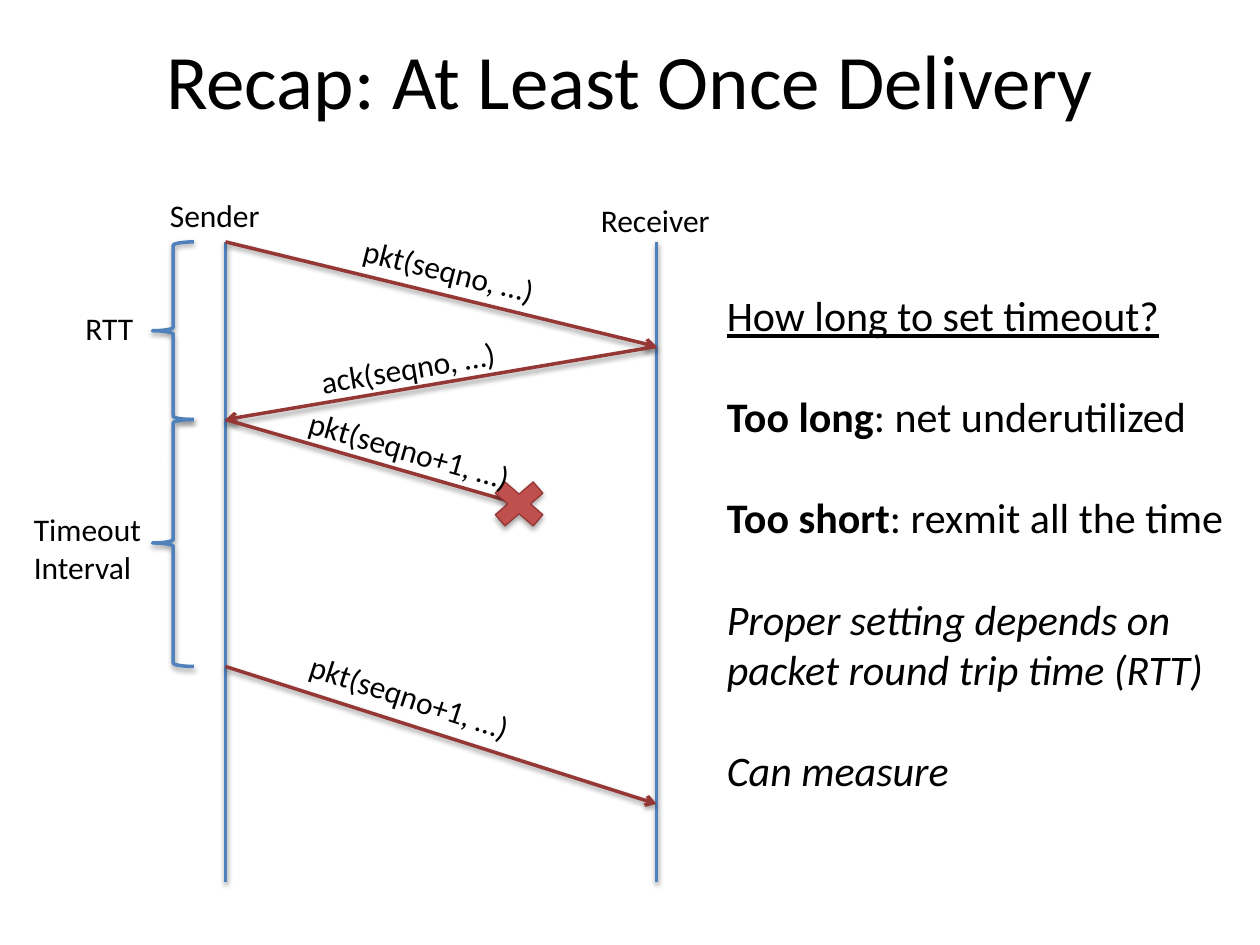
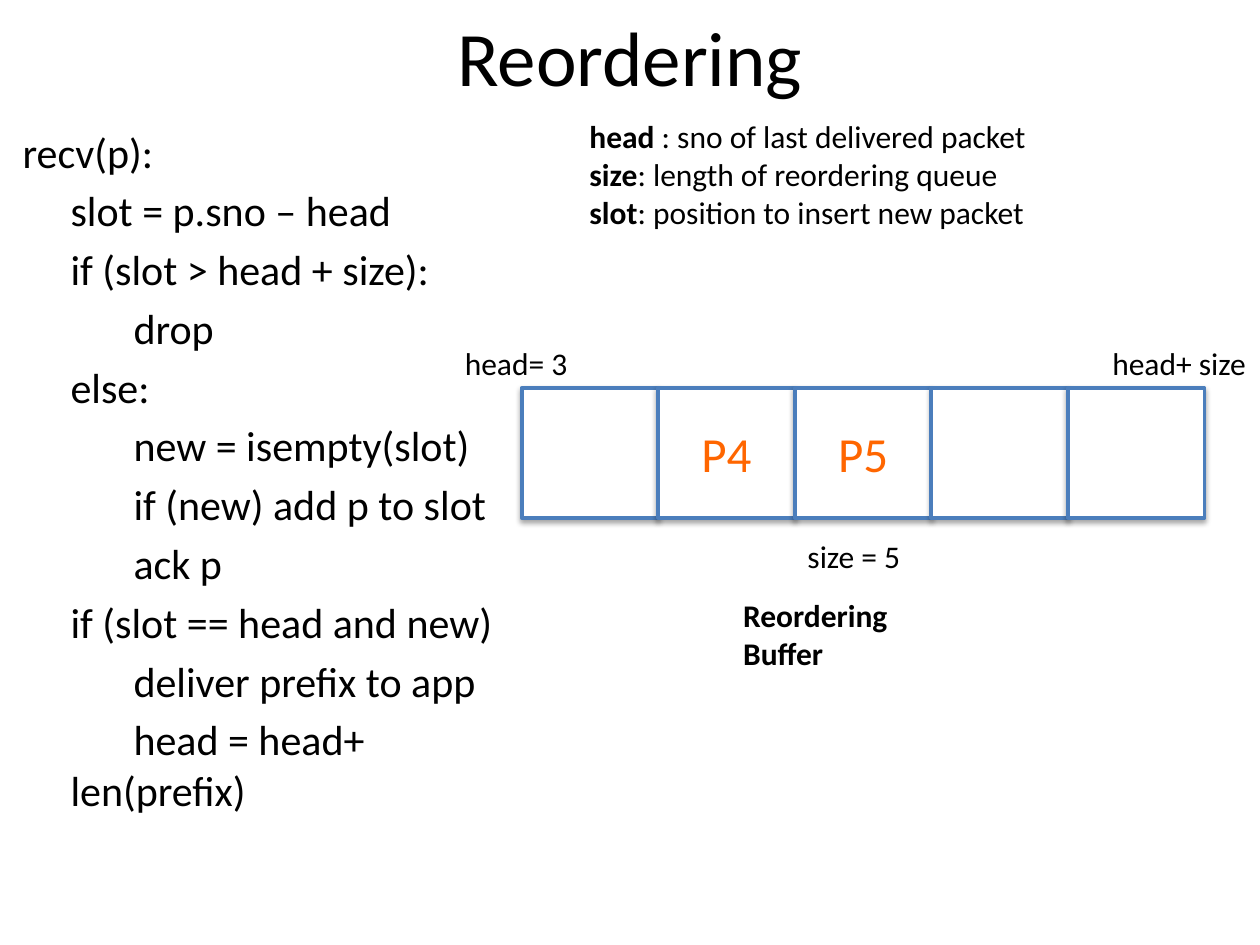
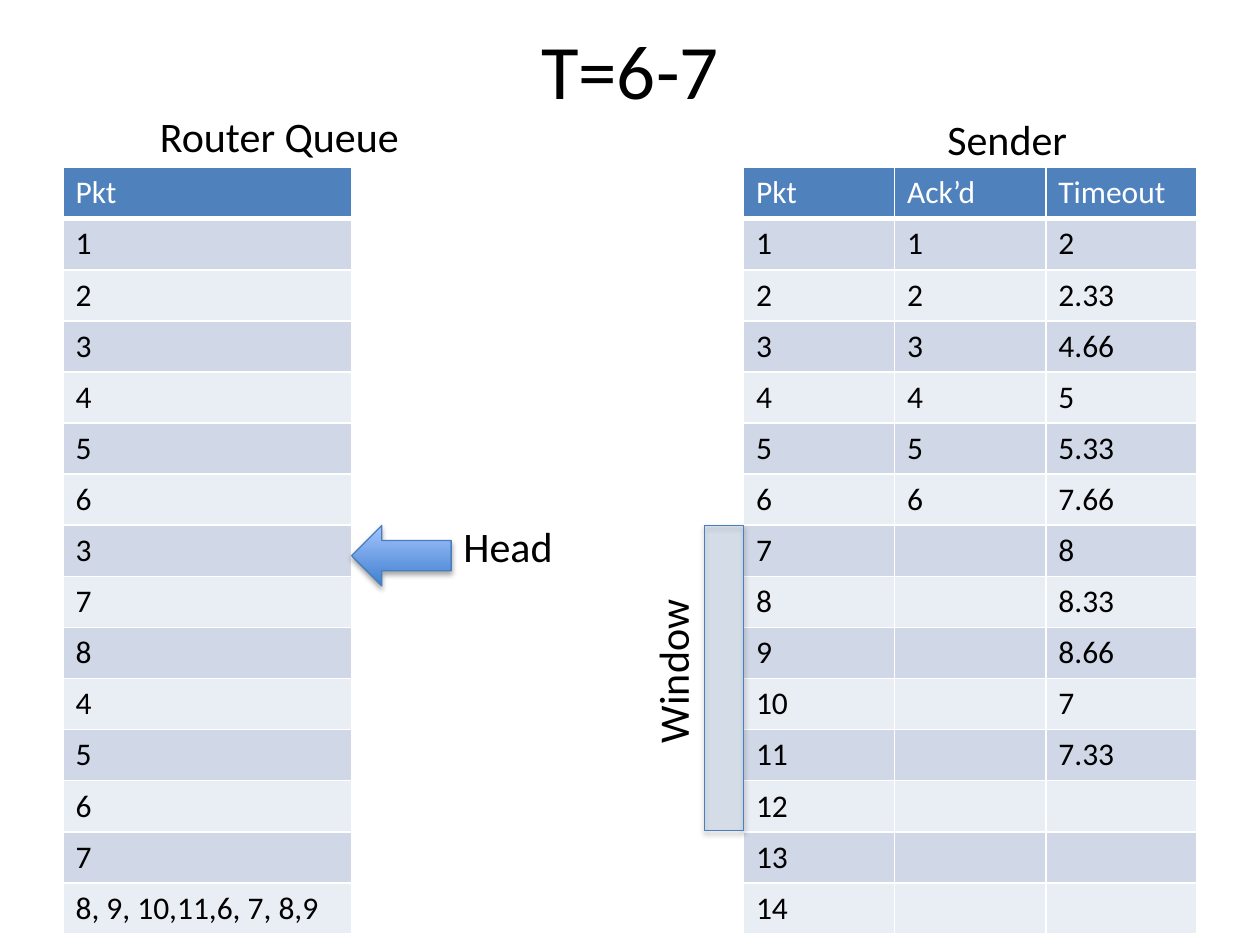
from dataclasses import dataclass
from typing import Any, NamedTuple

from lxml import etree
from pptx import Presentation
from pptx.dml.color import RGBColor
from pptx.enum.shapes import MSO_CONNECTOR, MSO_SHAPE
from pptx.enum.text import MSO_ANCHOR, MSO_AUTO_SIZE, PP_ALIGN
from pptx.oxml.ns import qn
from pptx.util import Inches, Pt

STRAIGHT = MSO_CONNECTOR.STRAIGHT
RECT = MSO_SHAPE.RECTANGLE
BRACE = MSO_SHAPE.LEFT_BRACE
CROSS = MSO_SHAPE.MATH_MULTIPLY
LEFT_ARROW = MSO_SHAPE.LEFT_ARROW
MIDDLE = MSO_ANCHOR.MIDDLE
CENTER = PP_ALIGN.CENTER
GROW = MSO_AUTO_SIZE.SHAPE_TO_FIT_TEXT
FIXED = MSO_AUTO_SIZE.NONE

FONT = "Calibri"
BLACK, WHITE = "000000", "FFFFFF"
BLUE, EDGE, RED, DARK_RED, ORANGE = "4F81BD", "4B7EBC", "C0504D", "953735", "FF6600"
ARROW_LIGHT, ARROW_DARK = "A4C4FF", "3F80CE"
BANDS = ("D0D8E8", "E9EDF4")
TITLE_ONLY, TITLE_AND_CONTENT = 5, 1

BOLD = {"bold": True}
ITALIC = {"italic": True}
UNDERLINE = {"underline": True}

Box = tuple[float, float, float, float]
Point = tuple[float, float]


class Run(NamedTuple):
    text: str
    fmt: dict[str, Any] = {}


Paras = list[list[Run]]


@dataclass
class Label:
    paras: Paras
    at: Box
    size: int = 18
    rotation: float = 0
    wrap: bool = True
    gap: int = 0


@dataclass
class Message:
    text: str
    start: Point
    end: Point
    label_at: Box
    rotation: float
    lost: bool = False


@dataclass
class Grid:
    rows: list[tuple[str, ...]]
    at: Box


SENDER_X, RECEIVER_X = 1.79, 5.21
LIFE_TOP, LIFE_END = 1.92, 7
ACK_Y, RESEND_Y = 3.33, 5.29

MESSAGES = [
    Message("pkt(seqno, …)", (SENDER_X, LIFE_TOP), (RECEIVER_X, 2.75), (2.77, 1.97, 1.79, 0.4), 14.1),
    Message("ack(seqno, …)", (RECEIVER_X, 2.75), (SENDER_X, ACK_Y), (2.44, 2.7, 1.79, 0.4), 350.4),
    Message("pkt(seqno+1, …)", (SENDER_X, ACK_Y), (4.12, 4), (2.33, 3.39, 1.98, 0.4), 16, True),
    Message("pkt(seqno+1, …)", (SENDER_X, RESEND_Y), (RECEIVER_X, 6.38), (2.33, 5.35, 1.98, 0.4), 18),
]

DELIVERY_LABELS = [
    Label([[Run("Timeout Interval")]], (0.17, 4, 1.58, 0.71)),
    Label([[Run("RTT")]], (0.58, 2.4, 1.58, 0.4)),
    Label([[Run("Sender")]], (1.25, 1.51, 1.83, 0.4)),
    Label([[Run("Receiver")]], (4.67, 1.55, 1.83, 0.4)),
    Label(
        [
            [Run("How long to set timeout?", UNDERLINE)],
            [Run("Too long", BOLD), Run(": net underutilized")],
            [Run("Too short", BOLD), Run(": rexmit all the time")],
            [Run("Proper setting depends on packet round trip time (RTT)", ITALIC)],
            [Run("Can measure", ITALIC)],
        ],
        (5.67, 2.25, 4.33, 4.14), 24, gap=29,
    ),
]

RECV_CODE = [
    (0, "recv(p):"),
    (1, "slot = p.sno – head"),
    (1, "if (slot > head + size):"),
    (2, "drop"),
    (1, "else:"),
    (2, "new = isempty(slot)"),
    (2, "if (new) add p to slot"),
    (2, "ack p"),
    (1, "if (slot == head and new)"),
    (2, "deliver prefix to app"),
    (2, "head = head+ len(prefix)"),
]
CODE_MARGIN = Inches(0.38)
FIRST_LINE_INDENTS = (-CODE_MARGIN, 0, Inches(0.5))

BUFFER = ("", "P4", "P5", "", "")
BUFFER_LEFT, BUFFER_TOP, BUFFER_W, BUFFER_H = 4.14, 3.08, 5.42, 1.03

REORDERING_LABELS = [
    Label([[Run("size = 5")]], (6.31, 4.21, 0.95, 0.4), wrap=False),
    Label([[Run("head= 3")]], (3.59, 2.68, 1.02, 0.4), wrap=False),
    Label([[Run("head+ size")]], (8.73, 2.68, 1.27, 0.4), wrap=False),
    Label(
        [
            [Run("head ", BOLD), Run(": sno of last delivered packet")],
            [Run("size", BOLD), Run(": length of reordering queue")],
            [Run("slot", BOLD), Run(": position to insert new packet")],
        ],
        (4.58, 0.88, 5, 1.31),
    ),
    Label([[Run("Reordering", BOLD)], [Run("Buffer", BOLD)]], (5.8, 4.68, 1.37, 0.71), wrap=False),
]

QUEUE = ("Pkt", "1", "2", "3", "4", "5", "6", "3", "7", "8", "4", "5", "6", "7", "8, 9, 10,11,6, 7, 8,9")
TIMEOUTS = ("2", "2.33", "4.66", "5", "5.33", "7.66", "8", "8.33", "8.66", "7", "7.33", "", "", "")
LAST_ACKED = 6

GRIDS = [
    Grid([(pkt,) for pkt in QUEUE], (0.5, 1.33, 2.29, 6.08)),
    Grid(
        [("Pkt", "Ack’d", "Timeout")]
        + [(str(n), str(n) if n <= LAST_ACKED else "", t) for n, t in enumerate(TIMEOUTS, 1)],
        (5.9, 1.33, 3.6, 6.08),
    ),
]

QUEUE_LABELS = [
    Label([[Run("Router Queue")]], (1.17, 0.83, 2.12, 0.5), 24, wrap=False),
    Label([[Run("Sender")]], (7.42, 0.85, 1.16, 0.5), 24, wrap=False),
    Label([[Run("Window")]], (4.66, 5.07, 1.35, 0.5), 24, 270, False),
    Label([[Run("Head")]], (3.58, 4.08, 0.92, 0.5), 24, wrap=False),
]


def rgb(color: str) -> RGBColor:
    return RGBColor.from_string(color)


def inches(at: Box) -> list[int]:
    return [Inches(v) for v in at]


def add_xml(parent: Any, tag: str, **attrs: Any) -> Any:
    return etree.SubElement(parent, qn(tag), {k: str(v) for k, v in attrs.items()})


def add_run(p: Any, run: Run, size: int, color: str = BLACK) -> None:
    r = p.add_run()
    r.text = run.text
    r.font.color.rgb = rgb(color)
    for name, value in {"name": FONT, "size": Pt(size), **run.fmt}.items():
        setattr(r.font, name, value)


def write(tf: Any, paras: Paras, size: int, color: str = BLACK, gap: int = 0) -> None:
    for i, runs in enumerate(paras):
        p = tf.add_paragraph() if i else tf.paragraphs[0]
        if i and gap:
            p.space_before = Pt(gap)
        for run in runs:
            add_run(p, run, size, color)


def place(sp: Any, at: Box) -> None:
    for name, value in zip(("left", "top", "width", "height"), inches(at)):
        setattr(sp, name, value)


def add_slide(prs: Any, layout: int, title: str, at: Box) -> Any:
    s = prs.slides.add_slide(prs.slide_layouts[layout])
    place(s.shapes.title, at)
    write(s.shapes.title.text_frame, [[Run(title)]], 44)
    return s


def add_labels(s: Any, labels: list[Label]) -> None:
    for label in labels:
        sp = s.shapes.add_textbox(*inches(label.at))
        sp.rotation = label.rotation
        tf = sp.text_frame
        tf.word_wrap = label.wrap
        tf.auto_size = GROW
        write(tf, label.paras, label.size, gap=label.gap)


def style(sp: Any, line: str, width: float, distance: float, opacity: int) -> None:
    sp.line.color.rgb = rgb(line)
    sp.line.width = Pt(width)
    effects = add_xml(sp._element.spPr, "a:effectLst")
    shadow = add_xml(effects, "a:outerShdw", blurRad=Pt(3.1), dist=Pt(distance),
                     dir=90 * 60000, rotWithShape=0)
    add_xml(add_xml(shadow, "a:srgbClr", val=BLACK), "a:alpha", val=opacity * 1000)


def add_figure(s: Any, kind: Any, at: Box, fill: str = "", line: str = EDGE, width: float = 0.75) -> Any:
    sp = s.shapes.add_shape(kind, *inches(at))
    if fill:
        sp.fill.solid()
        sp.fill.fore_color.rgb = rgb(fill)
    else:
        sp.fill.background()
    style(sp, line, width, *((1.8, 35) if fill else (1.6, 38)))
    return sp


def add_line(s: Any, start: Point, end: Point, color: str, arrow: bool = False) -> None:
    cx = s.shapes.add_connector(STRAIGHT, *[Inches(v) for v in start + end])
    style(cx, color, 2, 1.6, 38)
    if arrow:
        add_xml(cx.line._get_or_add_ln(), "a:tailEnd", type="arrow")


def add_grid(s: Any, grid: Grid) -> None:
    table = s.shapes.add_table(len(grid.rows), len(grid.rows[0]), *inches(grid.at)).table
    for i, row in enumerate(grid.rows):
        for j, text in enumerate(row):
            cell = table.cell(i, j)
            for side in "LRTB":
                heavy = (i, side) in ((0, "B"), (1, "T"))
                ln = add_xml(cell._tc.get_or_add_tcPr(), f"a:ln{side}", w=Pt(3 if heavy else 1))
                add_xml(add_xml(ln, "a:solidFill"), "a:srgbClr", val=WHITE)
            cell.fill.solid()
            cell.fill.fore_color.rgb = rgb(BANDS[(i - 1) % 2] if i else BLUE)
            if text:
                write(cell.text_frame, [[Run(text, {"bold": False})]], 18, BLACK if i else WHITE)


def delivery_slide(prs: Any) -> None:
    s = add_slide(prs, TITLE_ONLY, "Recap: At Least Once Delivery", (0.5, 0, 9, 1.25))
    for x in (SENDER_X, RECEIVER_X):
        add_line(s, (x, LIFE_TOP), (x, LIFE_END), BLUE)
    for top, bottom in ((LIFE_TOP, ACK_Y), (ACK_Y, RESEND_Y)):
        add_figure(s, BRACE, (1.21, top, 0.33, bottom - top), line=BLUE, width=2)
    for m in MESSAGES:
        add_line(s, m.start, m.end, DARK_RED, arrow=True)
        if m.lost:
            add_figure(s, CROSS, (3.83, 3.75, 0.58, 0.5), RED, DARK_RED)
        add_labels(s, [Label([[Run(m.text)]], m.label_at, rotation=m.rotation)])
    add_labels(s, DELIVERY_LABELS)


def reordering_slide(prs: Any) -> None:
    s = add_slide(prs, TITLE_AND_CONTENT, "Reordering", (0.5, 0, 9, 0.88))
    body = s.placeholders[1]
    place(body, (0.08, 0.95, 4.25, 4.55))
    tf = body.text_frame
    tf.auto_size = FIXED
    write(tf, [[Run(code)] for _, code in RECV_CODE], 24)
    for p, (depth, _) in zip(tf.paragraphs, RECV_CODE):
        pPr = p._p.get_or_add_pPr()
        pPr.set("marL", str(CODE_MARGIN))
        pPr.set("indent", str(FIRST_LINE_INDENTS[depth]))
        add_xml(pPr, "a:buNone")
    slot_w = BUFFER_W / len(BUFFER)
    for i, packet in enumerate(BUFFER):
        at = (BUFFER_LEFT + i * slot_w, BUFFER_TOP, slot_w, BUFFER_H)
        sp = add_figure(s, RECT, at, WHITE, width=2.25)
        if packet:
            write(sp.text_frame, [[Run(packet)]], 28, ORANGE)
            sp.text_frame.vertical_anchor = MIDDLE
            sp.text_frame.paragraphs[0].alignment = CENTER
    add_labels(s, REORDERING_LABELS)


def queue_slide(prs: Any) -> None:
    s = add_slide(prs, TITLE_ONLY, "T=6-7", (0.5, -0.08, 9, 1.25))
    for grid in GRIDS:
        add_grid(s, grid)
    window = add_figure(s, RECT, (5.59, 4.17, 0.31, 2.42), BLUE)
    tint = window._element.spPr.find(qn("a:solidFill")).find(qn("a:srgbClr"))
    add_xml(tint, "a:alpha", val=17000)
    head = add_figure(s, LEFT_ARROW, (2.79, 4.17, 0.79, 0.48), ARROW_DARK)
    head.fill.gradient()
    head.fill.gradient_angle = 90
    for stop, color in zip(head.fill.gradient_stops, (ARROW_DARK, ARROW_LIGHT)):
        stop.color.rgb = rgb(color)
    add_labels(s, QUEUE_LABELS)


def main() -> None:
    prs = Presentation()
    prs.slide_width, prs.slide_height = Inches(10), Inches(7.5)
    delivery_slide(prs)
    reordering_slide(prs)
    queue_slide(prs)
    prs.save("out.pptx")


if __name__ == "__main__":
    main()
